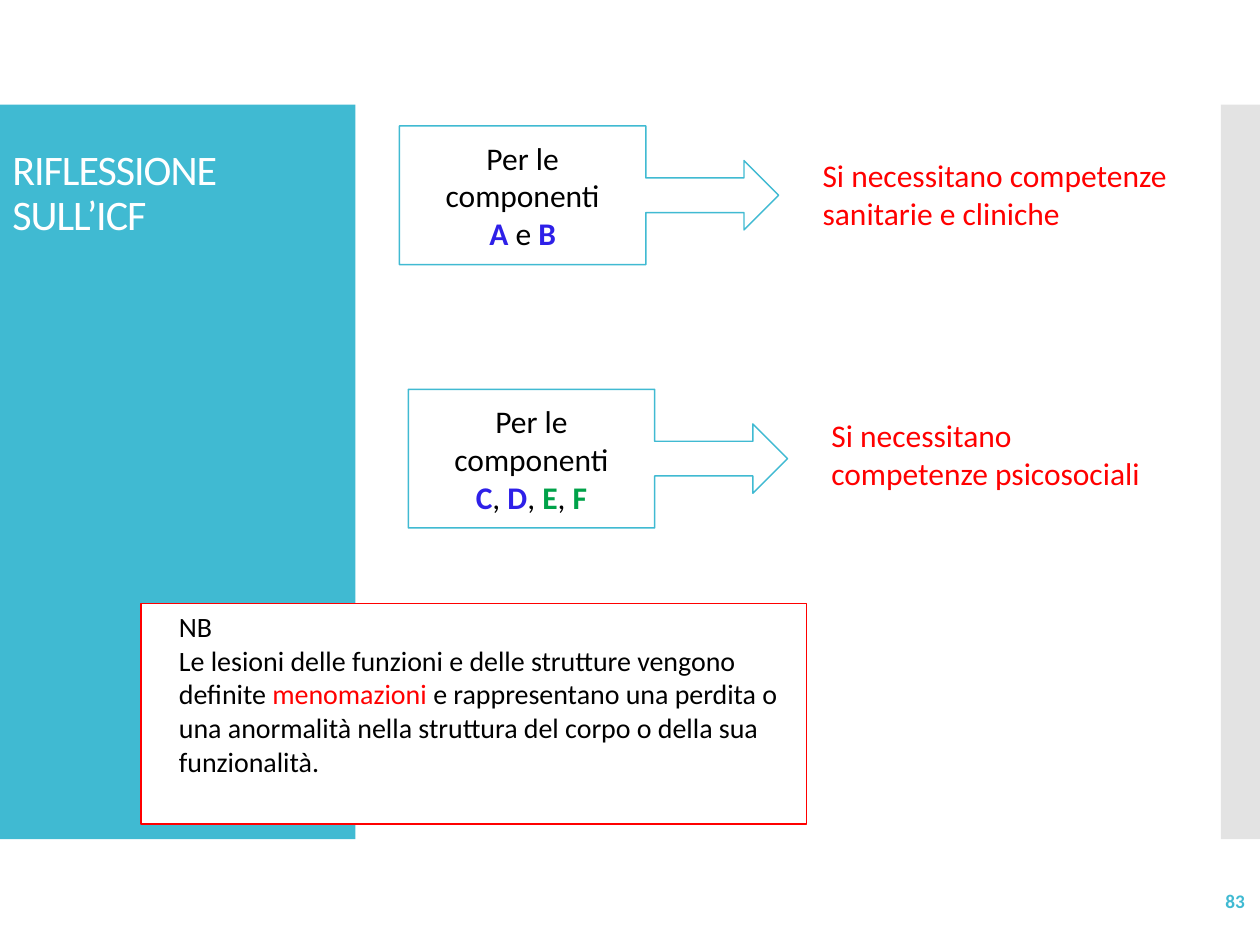
import pptx
import pptx.dml.color
import pptx.enum.shapes
import pptx.enum.text
import pptx.oxml.ns
import pptx.util
from lxml import etree

Inches = pptx.util.Inches
Pt = pptx.util.Pt
SHAPE = pptx.enum.shapes.MSO_SHAPE
ANCHOR = pptx.enum.text.MSO_ANCHOR
ALIGN = pptx.enum.text.PP_ALIGN

TEAL, WHITE, BLACK = "40BAD2", "FFFFFF", "000000"
RED, BLUE, GREEN, GREY = "FF0000", "2E20E8", "00A249", "C8C8C8"


def rgb(color):
    return pptx.dml.color.RGBColor.from_string(color)


def add_panel(page, kind, place, fill, line=None, width=0.85):
    shape = page.shapes.add_shape(kind, *map(Inches, place))
    shape.shadow.inherit = False
    shape.fill.solid()
    shape.fill.fore_color.rgb = rgb(fill)
    if line:
        shape.line.color.rgb = rgb(line)
        shape.line.width = Pt(width)
    else:
        shape.line.fill.background()
    return shape


def set_opacity(shape, percent):
    color = shape.fill._xPr.find(".//" + pptx.oxml.ns.qn("a:srgbClr"))
    alpha = etree.SubElement(color, pptx.oxml.ns.qn("a:alpha"))
    alpha.set("val", str(percent * 1000))


def write(box, paragraphs, size, align=ALIGN.LEFT, anchor=ANCHOR.TOP):
    """Fill a box with paragraphs, each a list of (text, color, bold) runs."""
    frame = box.text_frame
    frame.word_wrap = True
    frame.vertical_anchor = anchor
    for index, runs in enumerate(paragraphs):
        para = frame.paragraphs[0] if index == 0 else frame.add_paragraph()
        para.alignment = align
        for text, color, bold in runs:
            span = para.add_run()
            span.text = text
            span.font.name = "Calibri"
            span.font.size = Pt(size)
            span.font.bold = bold
            span.font.color.rgb = rgb(color)
    return frame


def add_text(page, place, runs, size, **layout):
    box = page.shapes.add_textbox(*map(Inches, place))
    return write(box, [runs], size, **layout)


def add_callout(page, left, top, letters):
    """Arrow callout listing component letters, given as (letter, color, separator)."""
    callout = add_panel(page, SHAPE.RIGHT_ARROW_CALLOUT, (left, top, 3.01, 1.1), WHITE, TEAL)
    runs = []
    for letter, color, separator in letters:
        runs.append((letter, color, True))
        if separator:
            runs.append((separator, BLACK, False))
    write(callout, [[("Per le componenti", BLACK, False)], runs], 18,
          align=ALIGN.CENTER, anchor=ANCHOR.MIDDLE)


def add_title(page):
    frame = add_text(page, (0, 0.68, 2.8, 1.73), [("RIFLESSIONE SULL’ICF", WHITE, False)],
                     24, anchor=ANCHOR.MIDDLE)
    para = frame.paragraphs[0]
    para.line_spacing = 0.9
    para.runs[0].font._element.set("spc", "-60")


def add_note(page):
    note = add_panel(page, SHAPE.RECTANGLE, (1.12, 4.79, 5.28, 1.75), WHITE, RED, 0.75)
    frame = write(note, [
        [("NB", BLACK, False)],
        [("Le lesioni delle funzioni e delle strutture vengono definite ", BLACK, False),
         ("menomazioni ", RED, False),
         ("e rappresentano una perdita o una anormalità nella struttura del corpo "
          "o della sua funzionalità.", BLACK, False)],
    ], 16)
    frame.margin_left = Inches(0.3)


def main():
    deck = pptx.Presentation()
    deck.slide_width, deck.slide_height = Inches(10), Inches(7.5)
    page = deck.slides.add_slide(deck.slide_layouts[6])

    add_panel(page, SHAPE.RECTANGLE, (0, 0.83, 2.82, 5.83), TEAL)
    set_opacity(add_panel(page, SHAPE.RECTANGLE, (9.69, 0.83, 0.31, 5.83), GREY), 50)
    add_title(page)
    add_text(page, (8.72, 6.95, 1.26, 0.4), [("83", TEAL, True)], 11,
             align=ALIGN.RIGHT, anchor=ANCHOR.MIDDLE)

    add_callout(page, 3.17, 1, [("A", BLUE, " e "), ("B", BLUE, "")])
    add_text(page, (6.43, 1.19, 3.01, 0.71),
             [("Si necessitano competenze sanitarie e cliniche", RED, False)], 18)
    add_callout(page, 3.24, 3.09, [("C", BLUE, ", "), ("D", BLUE, ", "),
                                   ("E", GREEN, ", "), ("F", GREEN, "")])
    add_text(page, (6.5, 3.25, 2.86, 1.01),
             [("Si necessitano competenze psicosociali", RED, False)], 18)
    add_note(page)

    deck.save("out.pptx")


if __name__ == "__main__":
    main()
